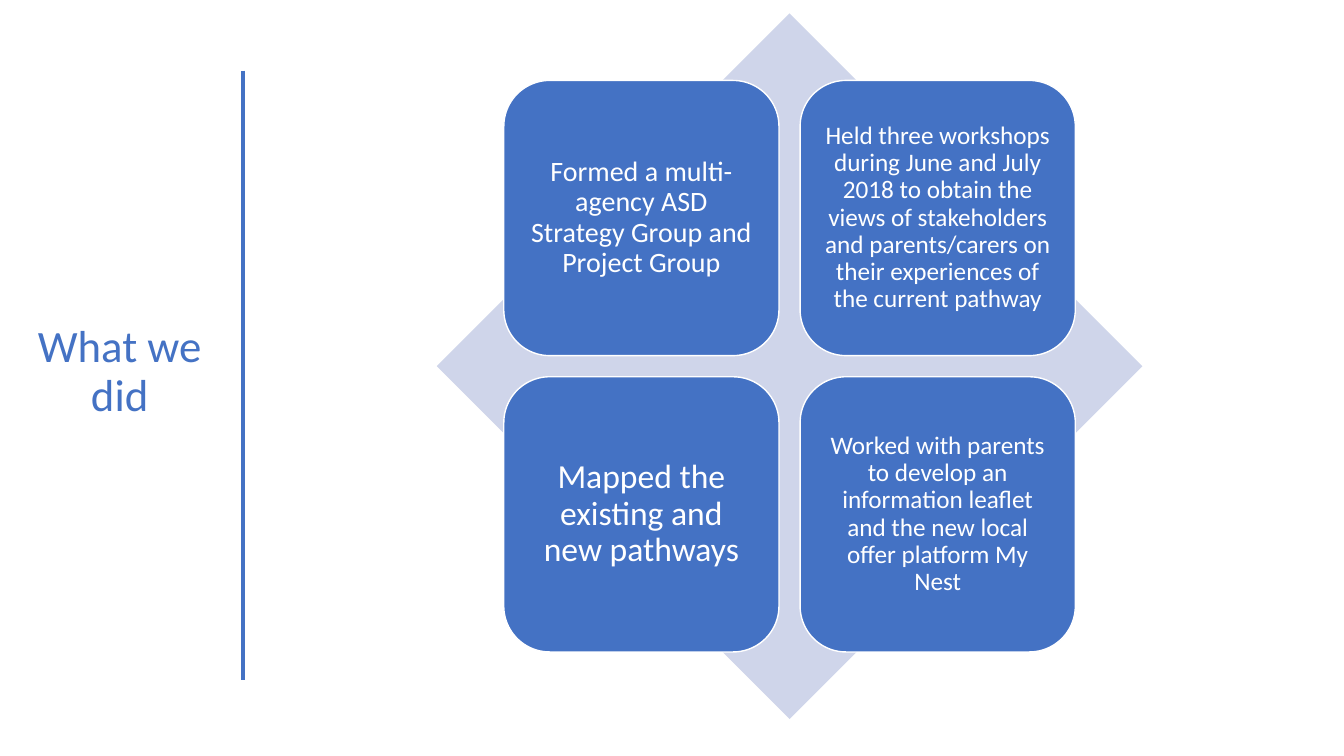
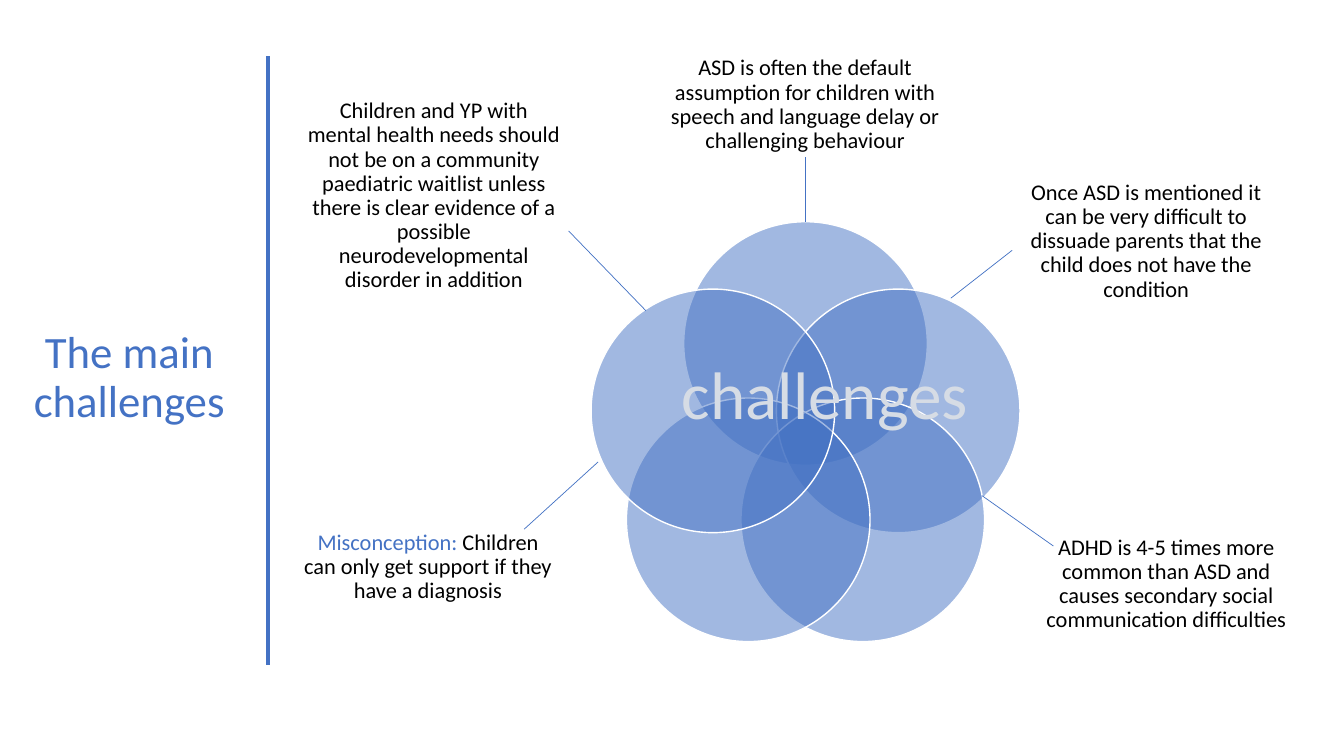
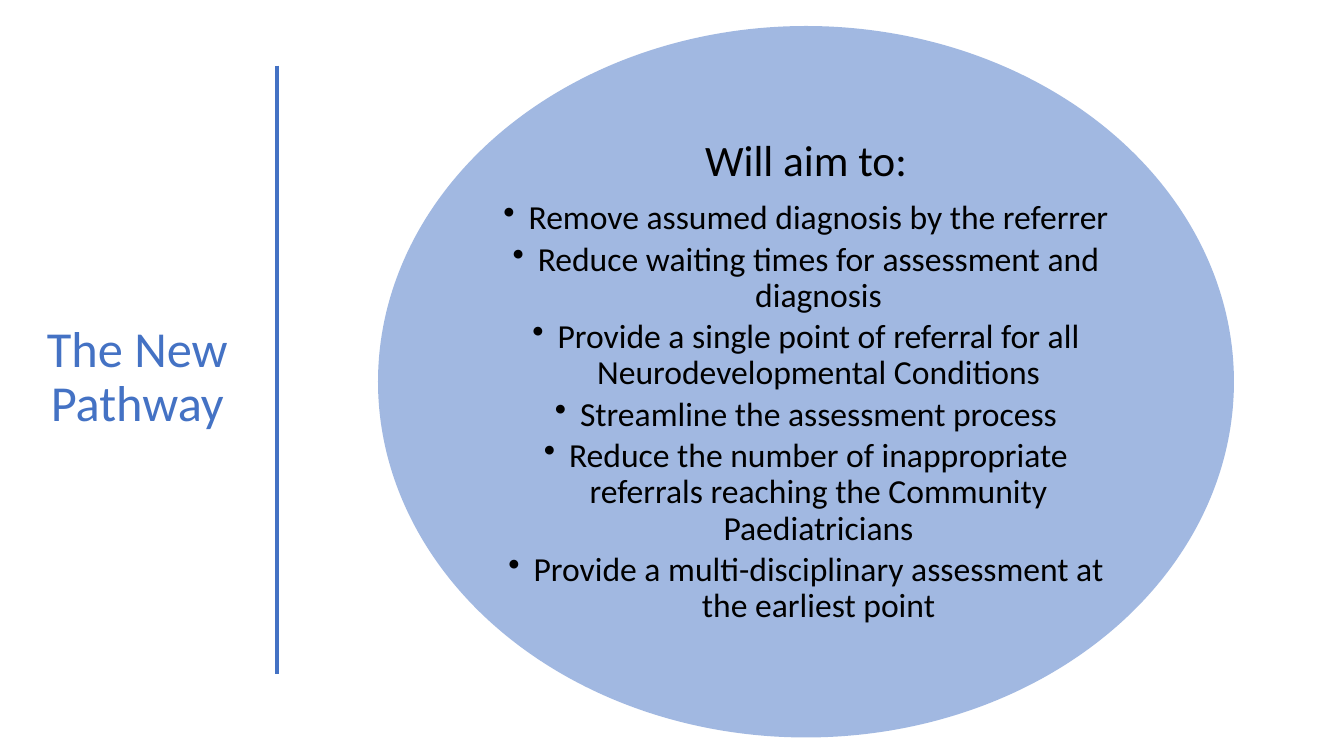
"""Build three slides on an autism assessment pathway review."""

from dataclasses import dataclass
from math import cos, radians, sin
from typing import Any

from lxml.etree import SubElement
from pptx import Presentation
from pptx.dml.color import RGBColor
from pptx.enum.shapes import MSO_CONNECTOR, MSO_SHAPE
from pptx.enum.text import MSO_ANCHOR, MSO_AUTO_SIZE, PP_ALIGN
from pptx.oxml.ns import qn
from pptx.util import Emu, Inches, Pt

BLUE = RGBColor(0x44, 0x72, 0xC4)
PALE_BLUE = RGBColor(0xCF, 0xD5, 0xEA)
PALE_GREY = RGBColor(0xD6, 0xDC, 0xE5)
WHITE = RGBColor(0xFF, 0xFF, 0xFF)
BLACK = RGBColor(0x00, 0x00, 0x00)

FONT = "Calibri"
COLUMNS, ROWS = 160, 90
SLIDE_WIDTH, SLIDE_HEIGHT = Inches(40 / 3), Inches(7.5)
CELL = SLIDE_WIDTH / COLUMNS
RULE_ROWS = 72.5
TITLE_ROWS = 47.9

CENTRED = {"alignment": PP_ALIGN.CENTER, "line_spacing": 0.9}
MIDDLE = {"word_wrap": True, "auto_size": MSO_AUTO_SIZE.NONE, "vertical_anchor": MSO_ANCHOR.MIDDLE}


@dataclass(frozen=True)
class Area:
    column: float
    row: float
    columns: float
    rows: float

    def lengths(self) -> tuple[Emu, ...]:
        return tuple(cells(n) for n in (self.column, self.row, self.columns, self.rows))


@dataclass(frozen=True)
class Span:
    text: str
    color: RGBColor = BLACK


@dataclass(frozen=True)
class Para:
    spans: tuple[Span, ...]
    size: float
    space_after: float = 0
    bullet: bool = False


@dataclass(frozen=True)
class Heading:
    text: str
    size: int
    column: float
    row: float
    columns: float
    rule_column: float
    rule_row: float


@dataclass(frozen=True)
class Tile:
    text: str
    size: int


@dataclass(frozen=True)
class Label:
    area: Area
    spans: tuple[Span, ...]


@dataclass(frozen=True)
class Leader:
    start: tuple[float, float]
    end: tuple[float, float]


def cells(count: float) -> Emu:
    return Emu(round(count * CELL))


def apply(target: Any, values: dict[str, Any]) -> None:
    for name, value in values.items():
        setattr(target, name, value)


def margins(length: int) -> dict[str, int]:
    return {f"margin_{side}": length for side in ("left", "top", "right", "bottom")}


def write(frame: Any, paras: list[Para], frame_format: dict[str, Any],
          para_format: dict[str, Any] = CENTRED) -> None:
    apply(frame, frame_format)
    for index, item in enumerate(paras):
        para = frame.add_paragraph() if index else frame.paragraphs[0]
        apply(para, para_format | {"space_after": Pt(item.space_after)})
        if item.bullet:
            para.level = 1
            properties = para._p.get_or_add_pPr()
            properties.set("marL", str(Inches(0.25)))
            properties.set("indent", str(Inches(-0.25)))
            SubElement(properties, qn("a:buChar")).set("char", "•")
        for part in item.spans:
            span = para.add_run()
            span.text = part.text
            apply(span.font, {"name": FONT, "size": Pt(item.size)})
            span.font.color.rgb = part.color


def add_box(page: Any, kind: MSO_SHAPE, area: Area, fill: RGBColor,
            outline: RGBColor | None = None, alpha: int = 100) -> Any:
    box = page.shapes.add_shape(kind, *area.lengths())
    box.shadow.inherit = False
    box.fill.solid()
    box.fill.fore_color.rgb = fill
    if alpha < 100:
        color = box.fill._xPr.find(qn("a:solidFill"))[0]
        SubElement(color, qn("a:alpha")).set("val", str(alpha * 1000))
    if outline is None:
        box.line.fill.background()
    else:
        box.line.color.rgb = outline
        box.line.width = Pt(1)
    return box


def add_text(page: Any, area: Area, paras: list[Para], frame_format: dict[str, Any],
             para_format: dict[str, Any] = CENTRED) -> None:
    box = page.shapes.add_textbox(*area.lengths())
    write(box.text_frame, paras, frame_format, para_format)


def add_line(page: Any, leader: Leader, width: float) -> None:
    points = [cells(n) for n in (*leader.start, *leader.end)]
    line = page.shapes.add_connector(MSO_CONNECTOR.STRAIGHT, *points)
    line.line.color.rgb = BLUE
    line.line.width = Pt(width)
    SubElement(line._element.spPr, qn("a:effectLst"))


def add_page(deck: Any, heading: Heading) -> Any:
    page = deck.slides.add_slide(deck.slide_layouts.get_by_name("Title Only"))
    title = page.shapes.title
    area = Area(heading.column, heading.row, heading.columns, TITLE_ROWS)
    apply(title, dict(zip(("left", "top", "width", "height"), area.lengths())))
    write(title.text_frame, [Para((Span(heading.text, BLUE),), heading.size)], MIDDLE)
    top = heading.rule_row
    column = heading.rule_column
    add_line(page, Leader((column, top), (column, top + RULE_ROWS)), 3)
    return page


def add_actions(deck: Any) -> None:
    page = add_page(deck, Heading("What we did", 32, 1.1, 20.4, 26.3, 28.9, 8.4))
    diamond = Area(52, 1.6, 84, 84)
    add_box(page, MSO_SHAPE.DIAMOND, diamond, PALE_BLUE)
    side, pitch, margin = (share * diamond.columns for share in (0.39, 0.42, 0.095))
    tiles = [
        Tile("Formed a multi-agency ASD Strategy Group and Project Group", 20),
        Tile("Held three workshops during June and July 2018 to obtain the views of "
             "stakeholders and parents/carers on their experiences of the current pathway", 18),
        Tile("Mapped the existing and new pathways", 24),
        Tile("Worked with parents to develop an information leaflet and the new local "
             "offer platform My Nest", 18),
    ]
    for index, tile in enumerate(tiles):
        row, column = divmod(index, 2)
        area = Area(diamond.column + margin + column * pitch,
                    diamond.row + margin + row * pitch, side, side)
        box = add_box(page, MSO_SHAPE.ROUNDED_RECTANGLE, area, BLUE, WHITE)
        write(box.text_frame, [Para((Span(tile.text, WHITE),), tile.size)],
              MIDDLE | margins(Pt(tile.size * 0.3)))


def add_challenges(deck: Any) -> None:
    page = add_page(deck, Heading("The main challenges", 32, 1.4, 21.1, 28, 31.9, 6.7))
    centre_column, centre_row, orbit, diameter = 95.9, 52.5, 11.6, 29
    labels = [
        Label(Area(77, 3.4, 37.7, 18.2), (Span(
            "ASD is often the default assumption for children with speech and language "
            "delay or challenging behaviour"),)),
        Label(Area(121.4, 18.2, 30.1, 21.1), (Span(
            "Once ASD is mentioned it can be very difficult to dissuade parents that the "
            "child does not have the condition"),)),
        Label(Area(123.8, 59, 30.1, 21.1), (Span(
            "ADHD is 4-5 times more common than ASD and causes secondary social "
            "communication difficulties"),)),
        Label(Area(36.6, 12.8, 30.1, 21.1), (Span(
            "Children and YP with mental health needs should not be on a community "
            "paediatric waitlist unless there is clear evidence of a possible "
            "neurodevelopmental disorder in addition"),)),
        Label(Area(35.9, 57, 30.1, 21.1), (
            Span("Misconception:", BLUE),
            Span(" Children can only get support if they have a diagnosis"))),
    ]
    for index, label in enumerate(labels):
        angle = radians(index * 360 / len(labels))
        circle = Area(centre_column + orbit * sin(angle) - diameter / 2,
                      centre_row - orbit * cos(angle) - diameter / 2, diameter, diameter)
        add_box(page, MSO_SHAPE.OVAL, circle, BLUE, WHITE, alpha=50)
        add_text(page, label.area, [Para(label.spans, 16)], MIDDLE | margins(0))
    add_text(page, Area(80, 41.3, 39.5, 10.9), [Para((Span("challenges", PALE_GREY),), 48)],
             {"word_wrap": True, "auto_size": MSO_AUTO_SIZE.SHAPE_TO_FIT_TEXT},
             {"alignment": PP_ALIGN.LEFT})
    leaders = [
        Leader((67.7, 27.5), (76.9, 37)),
        Leader((centre_column, 26.4), (centre_column, 18.7)),
        Leader((113.2, 35.5), (120.5, 29.8)),
        Leader((71.2, 55), (62.4, 63)),
        Leader((116.9, 59), (125.4, 65)),
    ]
    for leader in leaders:
        add_line(page, leader, 0.5)


def add_pathway(deck: Any) -> None:
    page = add_page(deck, Heading("The New Pathway", 36, 1.9, 21.1, 28.9, 33, 7.8))
    aims = [
        "Remove assumed diagnosis by the referrer",
        "Reduce waiting times for assessment and diagnosis",
        "Provide a single point of referral for all Neurodevelopmental Conditions",
        "Streamline the assessment process",
        "Reduce the number of inappropriate referrals reaching the Community Paediatricians",
        "Provide a multi-disciplinary assessment at the earliest point",
    ]
    paras = [Para((Span("Will aim to:"),), 31, 10.85)]
    paras += [Para((Span(aim),), 24, 3.6, bullet=True) for aim in aims]
    oval = add_box(page, MSO_SHAPE.OVAL, Area(45, 3.1, 101.9, 84.7), BLUE, alpha=50)
    write(oval.text_frame, paras, MIDDLE | margins(0))


def main() -> None:
    deck = Presentation()
    apply(deck, {"slide_width": SLIDE_WIDTH, "slide_height": SLIDE_HEIGHT})
    for add_slide in (add_actions, add_challenges, add_pathway):
        add_slide(deck)
    deck.save("out.pptx")


if __name__ == "__main__":
    main()
